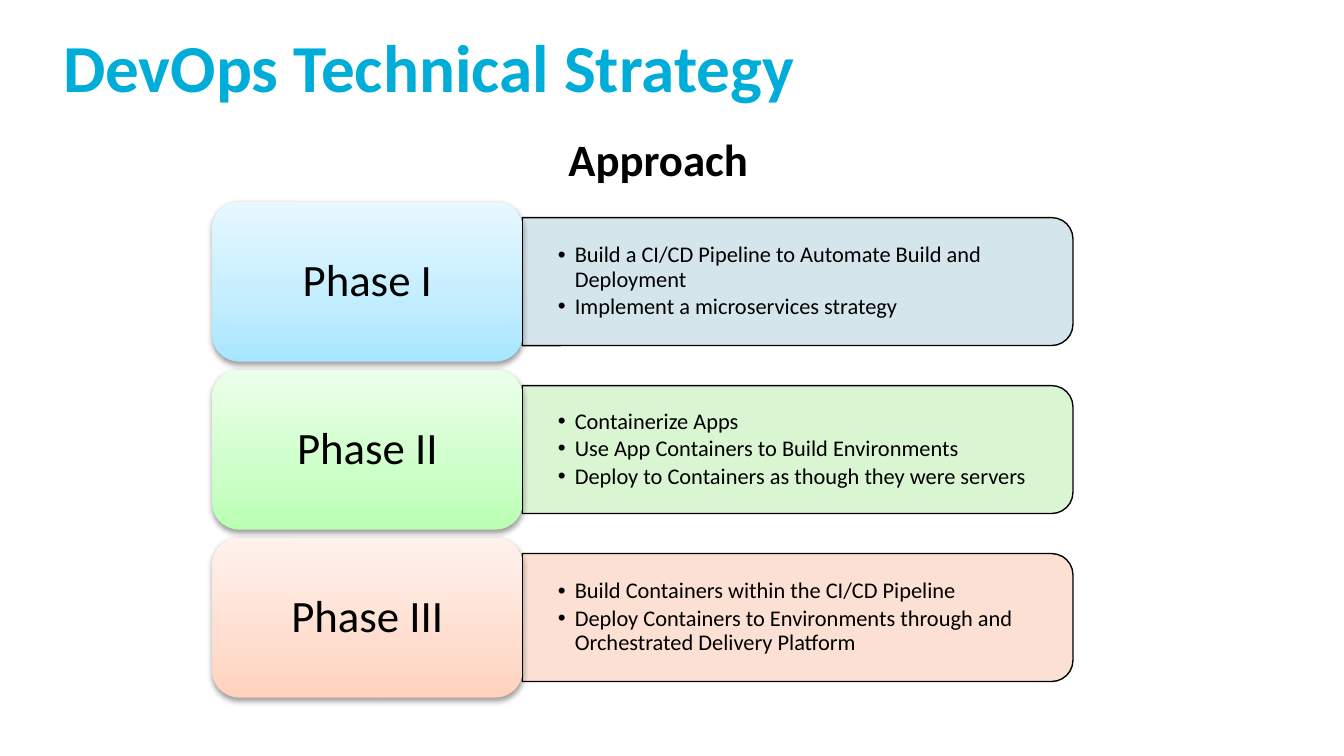
from lxml import etree
from pptx import Presentation
from pptx.dml import color
from pptx.enum import shapes, text
from pptx.oxml import ns
from pptx.util import Pt

FONT = "Calibri"
COLORS = {"title": "00ADD8", "text": "000000", "line": "000000", "shadow": "000000"}
PHASES = [
    {
        "name": "Phase I",
        "panel": "D0E3EA",
        "gradient": ["A7E6FF", "C1EDFF", "E7F8FF"],
        "steps": [
            "Build a CI/CD Pipeline to Automate Build and Deployment",
            "Implement a microservices strategy",
        ],
    },
    {
        "name": "Phase II",
        "panel": "D6F4CE",
        "gradient": ["B9FFB2", "CDFFC9", "ECFFEA"],
        "steps": [
            "Containerize Apps",
            "Use App Containers to Build Environments",
            "Deploy to Containers as though they were servers",
        ],
    },
    {
        "name": "Phase III",
        "panel": "FCDDCF",
        "gradient": ["FFD2BD", "FFDED0", "FFF2ED"],
        "steps": [
            "Build Containers within the CI/CD Pipeline",
            "Deploy Containers to Environments through and Orchestrated Delivery Platform",
        ],
    },
]


def rgb(value):
    return color.RGBColor.from_string(value)


def add_element(parent, tag, **attributes):
    values = {name: str(value) for name, value in attributes.items()}
    return etree.SubElement(parent, ns.qn(tag), values)


def add_color(parent, value, alpha=None):
    element = add_element(parent, "a:srgbClr", val=value)
    if alpha is not None:
        add_element(element, "a:alpha", val=alpha * 1000)


def add_run(paragraph, content, size, value=COLORS["text"], bold=False):
    run = paragraph.add_run()
    run.text = content
    run.font.name = FONT
    run.font.size = Pt(size)
    run.font.bold = bold
    run.font.color.rgb = rgb(value)


def set_gradient(shape, values):
    shape.fill.gradient()
    shape.fill.gradient_angle = 90
    stops = shape.fill._xPr.find(ns.qn("a:gradFill")).find(ns.qn("a:gsLst"))
    for stop in list(stops):
        stops.remove(stop)
    for position, value in zip((0, 35, 100), values):
        add_color(add_element(stops, "a:gs", pos=position * 1000), value)


def set_shadow(shape):
    shape.shadow.inherit = False
    effects = shape.element.spPr.find(ns.qn("a:effectLst"))
    shadow = add_element(
        effects, "a:outerShdw", blurRad=Pt(3.1), dist=Pt(1.6), dir=5400000, rotWithShape=0
    )
    add_color(shadow, COLORS["shadow"], 38)


def add_panel(slide, left, top, width, height, fill):
    panel = slide.shapes.add_shape(
        shapes.MSO_SHAPE.ROUND_2_SAME_RECTANGLE,
        Pt(left + (width - height) / 2),
        Pt(top + (height - width) / 2),
        Pt(height),
        Pt(width),
    )
    panel.rotation = 90
    panel.shadow.inherit = False
    panel.fill.solid()
    panel.fill.fore_color.rgb = rgb(fill)
    fill_color = panel.element.spPr.find(ns.qn("a:solidFill"))[0]
    add_element(fill_color, "a:alpha", val=90000)
    panel.line.color.rgb = rgb(COLORS["line"])
    panel.line.width = Pt(0.75)


def add_steps(slide, left, top, width, height, steps):
    frame = slide.shapes.add_textbox(Pt(left), Pt(top), Pt(width), Pt(height)).text_frame
    frame.word_wrap = True
    frame.vertical_anchor = text.MSO_ANCHOR.MIDDLE
    frame.margin_left = frame.margin_right = Pt(19.2)
    frame.margin_top = frame.margin_bottom = Pt(9.6)
    for index, step in enumerate(steps):
        paragraph = frame.add_paragraph() if index else frame.paragraphs[0]
        paragraph.level = 1
        paragraph.line_spacing = 0.9
        paragraph.space_after = Pt(1.8)
        properties = paragraph._p.get_or_add_pPr()
        properties.set("marL", str(Pt(9)))
        properties.set("indent", str(Pt(-9)))
        add_element(properties, "a:buFont", typeface="Arial")
        add_element(properties, "a:buChar", char="•")
        add_run(paragraph, step, 12)


def add_label(slide, left, top, width, height, phase):
    label = slide.shapes.add_shape(
        shapes.MSO_SHAPE.ROUNDED_RECTANGLE, Pt(left), Pt(top), Pt(width), Pt(height)
    )
    set_gradient(label, phase["gradient"])
    label.line.fill.background()
    set_shadow(label)
    label.text_frame.vertical_anchor = text.MSO_ANCHOR.MIDDLE
    paragraph = label.text_frame.paragraphs[0]
    paragraph.alignment = text.PP_ALIGN.CENTER
    paragraph.line_spacing = 0.9
    add_run(paragraph, phase["name"], 24)


def add_phase(slide, left, top, width, height, phase):
    label_width = width * 0.36
    panel_left, panel_width = left + label_width, width - label_width
    panel_height = height * 0.8
    panel_top = top + (height - panel_height) / 2
    add_panel(slide, panel_left, panel_top, panel_width, panel_height, phase["panel"])
    add_steps(slide, panel_left, panel_top + 3.3, panel_width - 3.3, panel_height - 6.6, phase["steps"])
    add_label(slide, left, top, label_width, height, phase)


def add_phases(slide, left, top, width, height):
    gap = 4.3
    row_height = (height - gap * (len(PHASES) - 1)) / len(PHASES)
    for index, phase in enumerate(PHASES):
        add_phase(slide, left, top + index * (row_height + gap), width, row_height, phase)


def add_title(slide, left, top, width, height):
    title = slide.shapes.title
    title.left, title.top, title.width, title.height = Pt(left), Pt(top), Pt(width), Pt(height)
    frame = title.text_frame
    frame.auto_size = text.MSO_AUTO_SIZE.NONE
    frame.vertical_anchor = text.MSO_ANCHOR.MIDDLE
    paragraph = frame.paragraphs[0]
    paragraph.alignment = text.PP_ALIGN.LEFT
    add_run(paragraph, "DevOps Technical Strategy", 36, COLORS["title"], True)


def add_heading(slide, left, top, width, height):
    frame = slide.shapes.add_textbox(Pt(left), Pt(top), Pt(width), Pt(height)).text_frame
    frame.word_wrap = True
    frame.auto_size = text.MSO_AUTO_SIZE.SHAPE_TO_FIT_TEXT
    add_run(frame.paragraphs[0], "Approach", 24, bold=True)


def main():
    presentation = Presentation()
    presentation.slide_width, presentation.slide_height = Pt(720), Pt(405)
    slide = presentation.slides.add_slide(presentation.slide_layouts[5])
    add_phases(slide, 113.8, 108, 461, 265.7)
    add_title(slide, 26.6, 0, 648, 70)
    add_heading(slide, 297.4, 67, 126, 36)
    presentation.save("out.pptx")


if __name__ == "__main__":
    main()
